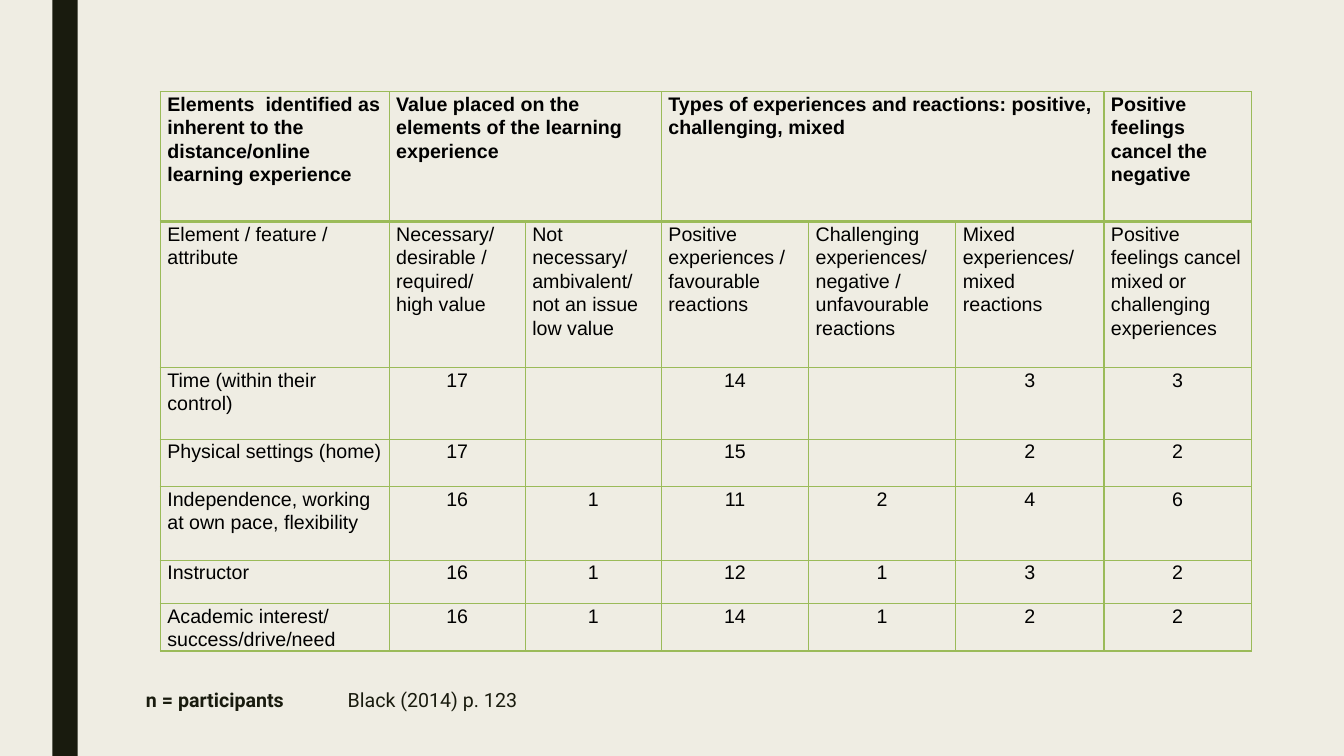
from lxml import etree
from pptx import Presentation
from pptx.dml.color import RGBColor
from pptx.enum.shapes import MSO_SHAPE
from pptx.enum.text import MSO_ANCHOR, PP_ALIGN
from pptx.oxml.ns import qn
from pptx.util import Inches, Pt

RECT = MSO_SHAPE.RECTANGLE
MIDDLE = MSO_ANCHOR.MIDDLE
LEFT, CENTER = PP_ALIGN.LEFT, PP_ALIGN.CENTER
CREAM = RGBColor(0xEF, 0xED, 0xE3)
DARK = RGBColor(0x19, 0x1B, 0x0E)
BLACK = RGBColor(0, 0, 0)
GREEN = RGBColor(0x9B, 0xBB, 0x59)

WIDTHS = [2.27, 1.35, 1.35, 1.46, 1.46, 1.47, 1.46]
HEIGHTS = [1.29, 1.45, 0.71, 0.47, 0.73, 0.43, 0.47]
SPANS = [(1, 2), (3, 5)]
ROWS = [
    ["Elements  identified as inherent to the distance/online learning experience",
     "Value placed on the elements of the learning experience", "",
     "Types of experiences and reactions: positive, challenging, mixed", "", "",
     "Positive feelings cancel the negative"],
    ["Element / feature / attribute",
     "Necessary/\ndesirable /\nrequired/\nhigh value",
     "Not necessary/\nambivalent/ not an issue\nlow value",
     "Positive experiences / favourable\nreactions",
     "Challenging\nexperiences/\nnegative / unfavourable\nreactions",
     "Mixed\nexperiences/\nmixed reactions",
     "Positive\nfeelings cancel mixed or challenging experiences"],
    ["Time (within their control)", "17", "", "14", "", "3", "3"],
    ["Physical settings (home)", "17", "", "15", "", "2", "2"],
    ["Independence, working at own pace, flexibility",
     "16", "1", "11", "2", "4", "6"],
    ["Instructor", "16", "1", "12", "1", "3", "2"],
    ["Academic interest/ success/drive/need", "16", "1", "14", "1", "2", "2"],
]


class Page:
    size = Pt(14)

    def __init__(self, deck):
        self.slide = deck.slides.add_slide(deck.slide_layouts[6])
        self.shapes = self.slide.shapes
        fill = self.slide.background.fill
        fill.solid()
        fill.fore_color.rgb = CREAM

    def style(self, font, name, color, bold):
        font.name, font.size, font.bold = name, self.size, bold
        font.color.rgb = color

    def bar(self, x, y, w, h):
        bar = self.shapes.add_shape(RECT, Inches(x), Inches(y), Inches(w), Inches(h))
        bar.shadow.inherit = False
        bar.fill.solid()
        bar.fill.fore_color.rgb = DARK
        bar.line.fill.background()

    def note(self, x, y, w, h, label, source, tab):
        box = self.shapes.add_textbox(Inches(x), Inches(y), Inches(w), Inches(h))
        frame = box.text_frame
        frame.word_wrap = True
        frame.vertical_anchor = MIDDLE
        para = frame.paragraphs[0]
        for text, bold in ((label + "\t", True), (source, False)):
            run = para.add_run()
            run.text = text
            self.style(run.font, "Roboto", DARK, bold)
        # Tab stop that sets the source apart from the label
        tabs = etree.SubElement(para._p.get_or_add_pPr(), qn("a:tabLst"))
        etree.SubElement(tabs, qn("a:tab"), pos=str(Inches(tab)), algn="l")

    def edge(self, cell, side, width):
        line = etree.SubElement(cell._tc.get_or_add_tcPr(), qn("a:ln" + side),
                                w=str(Pt(width)))
        fill = etree.SubElement(line, qn("a:solidFill"))
        etree.SubElement(fill, qn("a:srgbClr"), val=str(GREEN))

    def cell(self, cell, text, row):
        cell.margin_left = cell.margin_right = Inches(0.07)
        cell.margin_top = cell.margin_bottom = 0
        heavy = {(0, "B"), (1, "T")}
        for side in "LRTB":
            self.edge(cell, side, 2.25 if (row, side) in heavy else 1)
        cell.fill.background()
        cell.text_frame.text = text
        for para in cell.text_frame.paragraphs:
            para.line_spacing = 1.07
            para.alignment = CENTER if text.isdigit() else LEFT
            for run in para.runs:
                self.style(run.font, "Arial", BLACK, row == 0)

    def table(self, x, y, rows, widths, heights):
        table = self.shapes.add_table(
            len(rows), len(widths), Inches(x), Inches(y),
            Inches(sum(widths)), Inches(sum(heights))).table
        table.first_row = table.horz_banding = False
        for col, width in zip(table.columns, widths):
            col.width = Inches(width)
        for r, texts in enumerate(rows):
            table.rows[r].height = Inches(heights[r])
            for c, text in enumerate(texts):
                self.cell(table.cell(r, c), text, r)
        for first, last in SPANS:
            table.cell(0, first).merge(table.cell(0, last))


def main():
    deck = Presentation()
    deck.slide_width, deck.slide_height = Inches(13.33), Inches(7.5)
    page = Page(deck)

    # Side bar
    page.bar(0.52, 0, 0.25, 7.5)

    # Table of elements and reactions
    page.table(1.59, 0.91, ROWS, WIDTHS, HEIGHTS)

    # Footnote
    page.note(1.35, 6.72, 6.87, 0.44, "n = participants", "Black (2014) p. 123", 2)

    deck.save("out.pptx")


if __name__ == "__main__":
    main()
